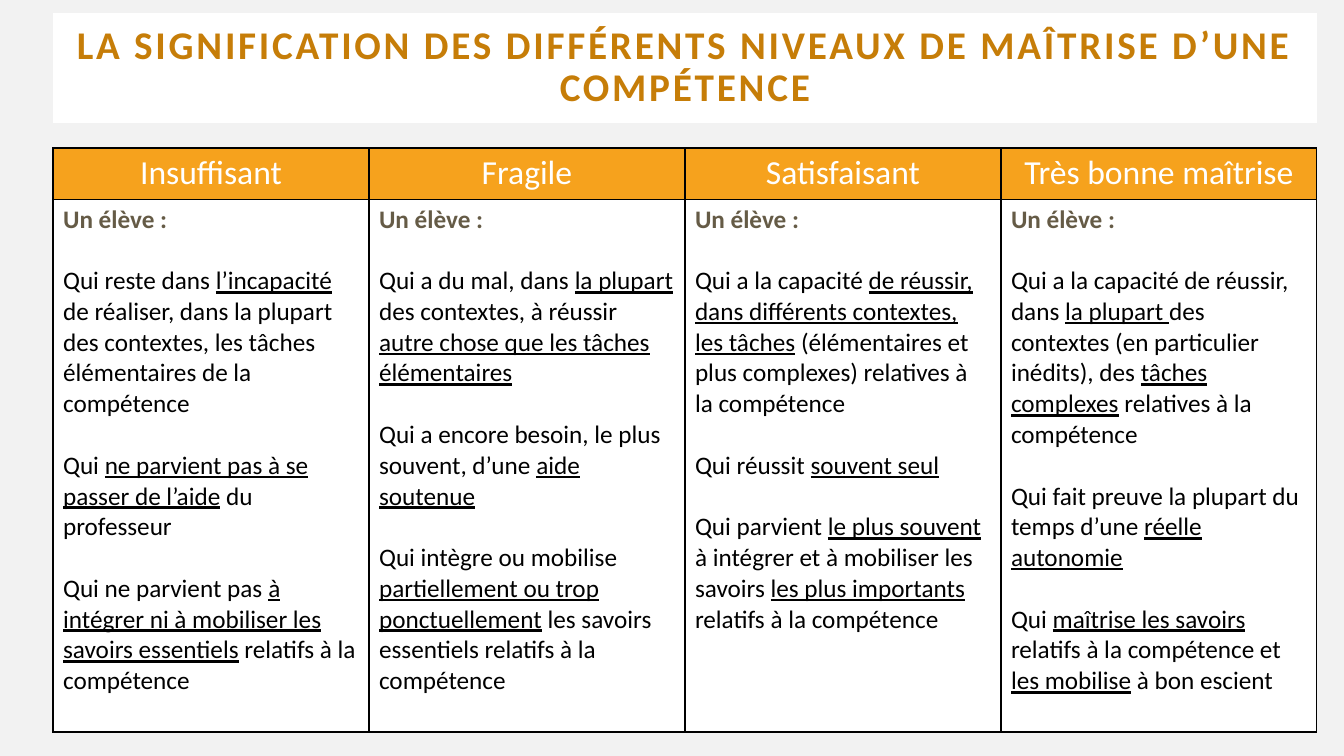
from lxml import etree
from pptx import Presentation
from pptx.dml.color import RGBColor
from pptx.enum.text import MSO_ANCHOR, MSO_AUTO_SIZE, PP_ALIGN
from pptx.oxml.ns import qn
from pptx.util import Emu, Pt

TITLE = "LA SIGNIFICATION DES DIFFÉRENTS NIVEAUX DE MAÎTRISE D’UNE COMPÉTENCE"
INTRO = "Un élève :"
# Text between underscores is underlined.
LEVELS = {
    "Insuffisant": [
        "Qui reste dans _l’incapacité_ de réaliser, dans la plupart des contextes, "
        "les tâches élémentaires de la compétence",
        "Qui _ne parvient pas à se passer de l’aide_ du professeur",
        "Qui ne parvient pas _à intégrer ni à mobiliser les savoirs essentiels_ "
        "relatifs à la compétence",
    ],
    "Fragile": [
        "Qui a du mal, dans _la plupart _des contextes, à réussir "
        "_autre chose que les tâches élémentaires_",
        "Qui a encore besoin, le plus souvent, d’une _aide soutenue_",
        "Qui intègre ou mobilise _partiellement ou trop ponctuellement_ "
        "les savoirs essentiels relatifs à la compétence",
    ],
    "Satisfaisant": [
        "Qui a la capacité _de réussir, dans différents contextes, les tâches_ "
        "(élémentaires et plus complexes) relatives à la compétence",
        "Qui réussit _souvent seul_",
        "Qui parvient _le plus souvent _à intégrer et à mobiliser les savoirs "
        "_les plus importants _relatifs à la compétence",
    ],
    "Très bonne maîtrise": [
        "Qui a la capacité de réussir, dans _la plupart _des contextes "
        "(en particulier inédits), des _tâches complexes_ relatives à la compétence",
        "Qui fait preuve la plupart du temps d’une _réelle autonomie_",
        "Qui _maîtrise les savoirs _relatifs à la compétence et "
        "_les mobilise_ à bon escient",
    ],
}
COLORS = {
    "background": "F2F2F2", "panel": "FFFFFF", "title": "C67D08", "header": "F6A21D",
    "header_text": "FFFFFF", "intro": "655B46", "body": "000000", "border": "000000",
}
FORMATS = {
    "title": {"size": Pt(28), "bold": True},
    "header_text": {"size": Pt(24), "bold": False},
    "intro": {"size": Pt(18), "bold": True},
    "body": {"size": Pt(18), "bold": False},
}
SLIDE_W, SLIDE_H = 1344, 756
LEFT, COL_W = 53, 316
TITLE_TOP, TITLE_H = 13, 110
TABLE_TOP, ROW_HEIGHTS = 148, (50, 533)
TABLE_W = COL_W * len(LEVELS)
PARAGRAPH_GAP = Pt(22)


def px(n):
    return Emu(round(n * 9144000 / 1008))


def paint(fill, color):
    fill.solid()
    fill.fore_color.rgb = RGBColor.from_string(COLORS[color])


def add_run(p, text, style, underline=False):
    r = p.add_run()
    r.text = text
    for name, value in FORMATS[style].items():
        setattr(r.font, name, value)
    r.font.name = "Calibri"
    r.font.underline = underline
    r.font.color.rgb = RGBColor.from_string(COLORS[style])
    return r


def style_cell(cell, color):
    """Draw the four borders, then the fill that must follow them in the XML."""
    tc_pr = cell._tc.get_or_add_tcPr()
    for side in ("lnL", "lnR", "lnT", "lnB"):
        ln = etree.SubElement(tc_pr, qn(f"a:{side}"), w=str(Pt(1)))
        solid = etree.SubElement(ln, qn("a:solidFill"))
        etree.SubElement(solid, qn("a:srgbClr"), val=COLORS["border"])
    paint(cell.fill, color)


def add_title(slide):
    sp = slide.shapes.title
    sp.left, sp.top, sp.width, sp.height = map(px, (LEFT, TITLE_TOP, TABLE_W, TITLE_H))
    paint(sp.fill, "panel")
    tf = sp.text_frame
    tf.word_wrap = True
    tf.auto_size = MSO_AUTO_SIZE.NONE
    tf.vertical_anchor = MSO_ANCHOR.MIDDLE
    p = tf.paragraphs[0]
    p.alignment = PP_ALIGN.CENTER
    p.line_spacing = 0.9
    r = add_run(p, TITLE, "title")
    r._r.get_or_add_rPr().set("spc", "200")


def add_levels(slide):
    table = slide.shapes.add_table(
        len(ROW_HEIGHTS), len(LEVELS),
        *map(px, (LEFT, TABLE_TOP, TABLE_W, sum(ROW_HEIGHTS)))).table
    table.first_row = table.horz_banding = False
    for row, height in zip(table.rows, ROW_HEIGHTS):
        row.height = px(height)
    for col, (level, criteria) in enumerate(LEVELS.items()):
        table.columns[col].width = px(COL_W)
        header, body = table.cell(0, col), table.cell(1, col)
        style_cell(header, "header")
        style_cell(body, "panel")
        p = header.text_frame.paragraphs[0]
        p.alignment = PP_ALIGN.CENTER
        add_run(p, level, "header_text")
        tf = body.text_frame
        add_run(tf.paragraphs[0], INTRO, "intro")
        for criterion in criteria:
            p = tf.add_paragraph()
            p.space_before = PARAGRAPH_GAP
            for i, part in enumerate(criterion.split("_")):
                if part:
                    add_run(p, part, "body", underline=i % 2 == 1)


def main():
    prs = Presentation()
    prs.slide_width, prs.slide_height = px(SLIDE_W), px(SLIDE_H)
    slide = prs.slides.add_slide(prs.slide_layouts[5])
    paint(slide.background.fill, "background")
    add_title(slide)
    add_levels(slide)
    prs.save("out.pptx")


if __name__ == "__main__":
    main()
